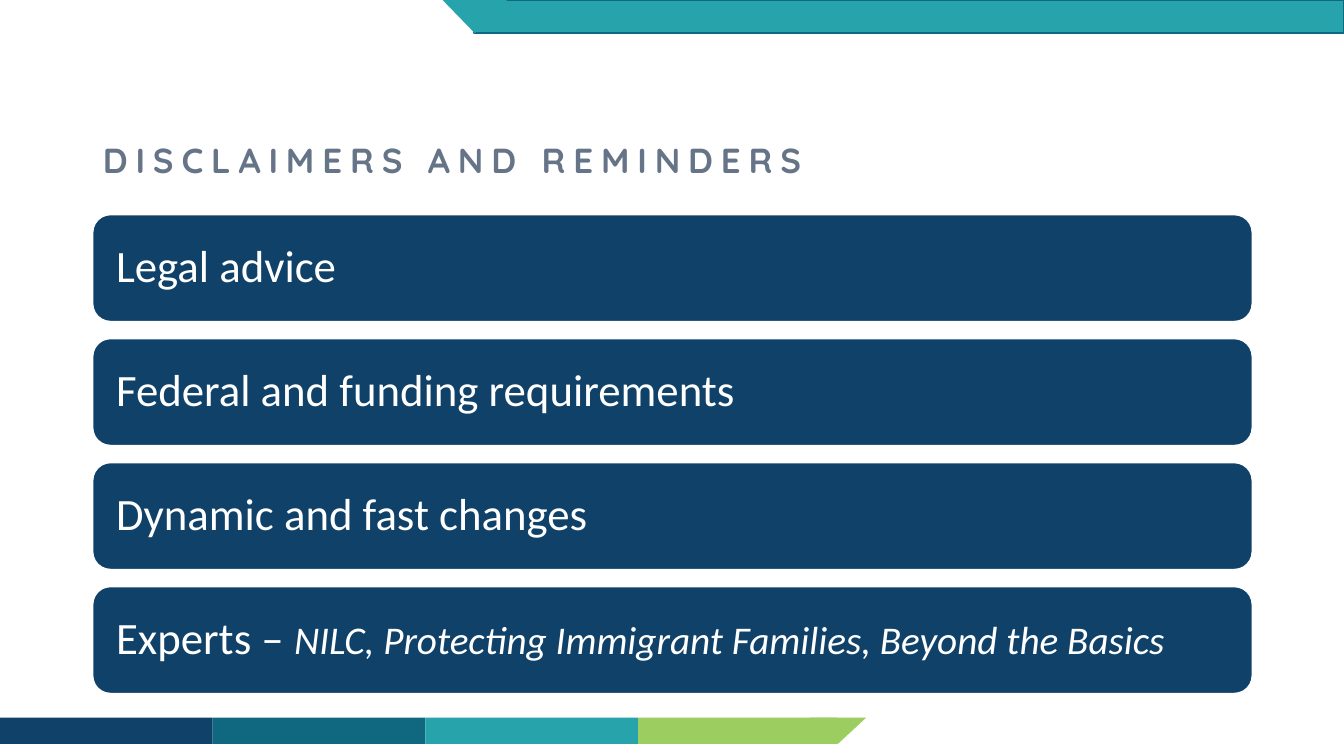
from pptx import Presentation
from pptx.dml.color import RGBColor
from pptx.enum import shapes as es, text as et
from pptx.util import Inches, Pt

NAVY = RGBColor(0x10, 0x41, 0x69)
TEAL = RGBColor(0x0F, 0x68, 0x7F)
AQUA = RGBColor(0x26, 0xA3, 0xAB)
LIME = RGBColor(0x9C, 0xCD, 0x60)
SLATE = RGBColor(0x66, 0x74, 0x87)
WHITE = RGBColor(0xFF, 0xFF, 0xFF)

TITLE = "DISCLAIMERS AND REMINDERS"
CARDS = [
    ("Legal advice", ""),
    ("Federal and funding requirements", ""),
    ("Dynamic and fast changes", ""),
    ("Experts – ", "NILC, Protecting Immigrant Families, Beyond the Basics"),
]
FOOT = [(NAVY, 2.11), (TEAL, 2.11), (AQUA, 2.11), (LIME, 1.97)]
LEFT, WIDTH = 0.92, 11.5
TOP, HIGH, STEP = 2.13, 1.06, 1.23
KIND = es.MSO_SHAPE


def add(slide, kind, box, fill, line=None, turn=0):
    shape = slide.shapes.add_shape(kind, *map(Inches, box))
    shape.shadow.inherit = False
    shape.rotation = turn
    shape.fill.solid()
    shape.fill.fore_color.rgb = fill
    if line is None:
        shape.line.fill.background()
    else:
        shape.line.color.rgb = line
        shape.line.width = Pt(1)
    return shape


def add_bands(slide):
    for i, (fill, wide) in enumerate(FOOT):
        add(slide, KIND.RECTANGLE, (i * 2.11, 7.12, wide, 0.26), fill)
    add(slide, KIND.ISOSCELES_TRIANGLE, (8.03, 7.12, 0.56, 0.26), LIME, turn=180)
    add(slide, KIND.RECTANGLE, (4.7, 0, 8.63, 0.33), AQUA, TEAL)
    add(slide, KIND.ISOSCELES_TRIANGLE, (4.39, 0, 0.64, 0.33), AQUA, turn=180)


def add_title(slide):
    title = slide.shapes.title
    title.left, title.top = Inches(LEFT), Inches(0.88)
    title.width, title.height = Inches(WIDTH), Inches(1.45)
    frame = title.text_frame
    frame.auto_size = et.MSO_AUTO_SIZE.NONE
    frame.vertical_anchor = et.MSO_ANCHOR.MIDDLE
    para = frame.paragraphs[0]
    para.alignment = et.PP_ALIGN.LEFT
    para.line_spacing = 0.9
    run = para.add_run()
    run.text = TITLE
    run._r.get_or_add_rPr().set("spc", "560")
    font = para.font
    font.name, font.size, font.bold = "Quicksand", Pt(24.8), True
    font.color.rgb = SLATE


def add_card(slide, i, lead, names):
    box = (LEFT, TOP + i * STEP, WIDTH, HIGH)
    card = add(slide, KIND.ROUNDED_RECTANGLE, box, NAVY, WHITE)
    frame = card.text_frame
    frame.word_wrap = True
    frame.vertical_anchor = et.MSO_ANCHOR.MIDDLE
    frame.margin_left = frame.margin_right = Inches(0.18)
    frame.margin_top = frame.margin_bottom = Inches(0.18)
    para = frame.paragraphs[0]
    para.alignment = et.PP_ALIGN.LEFT
    para.line_spacing = 0.9
    font = para.font
    font.name, font.size = "Calibri", Pt(32)
    font.color.rgb = WHITE
    para.add_run().text = lead
    if names:
        run = para.add_run()
        run.text = names
        run.font.size, run.font.italic = Pt(28), True


def main():
    deck = Presentation()
    deck.slide_width, deck.slide_height = Inches(13.33), Inches(7.5)
    slide = deck.slides.add_slide(deck.slide_layouts[5])
    add_bands(slide)
    add_title(slide)
    for i, (lead, names) in enumerate(CARDS):
        add_card(slide, i, lead, names)
    deck.save("out.pptx")


if __name__ == "__main__":
    main()
